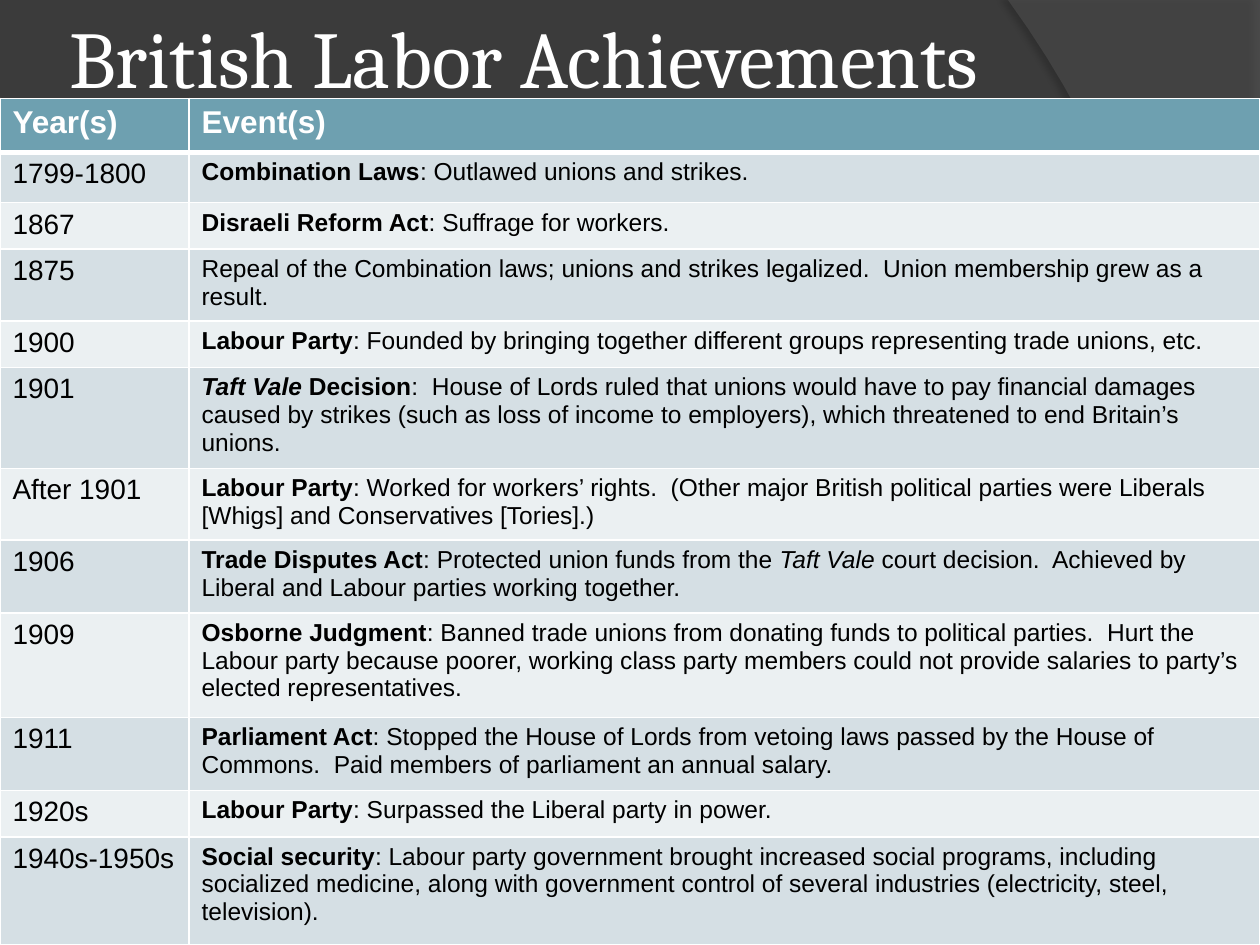
from lxml import etree
from pptx import Presentation
from pptx.dml.color import RGBColor
from pptx.enum.text import MSO_ANCHOR, PP_ALIGN
from pptx.oxml import parse_xml
from pptx.oxml.ns import nsdecls, qn
from pptx.util import Inches, Pt

MIDDLE = MSO_ANCHOR.MIDDLE
LEFT = PP_ALIGN.LEFT

BACKGROUND = RGBColor(0x3B, 0x3B, 0x3B)
SWEEP = RGBColor(0x5E, 0x5E, 0x5E)
WHITE = RGBColor(0xFF, 0xFF, 0xFF)
BLACK = RGBColor(0, 0, 0)
HEADER = RGBColor(0x6E, 0xA0, 0xB0)
BANDS = (RGBColor(0xD5, 0xDF, 0xE4), RGBColor(0xEB, 0xF0, 0xF2))

WIDTH, HEIGHT = Inches(10), Inches(7.5)
COLUMNS = (0.15, 0.85)
ROWS = (0.43, 0.4, 0.37, 0.57, 0.37, 0.8, 0.57, 0.58, 0.83, 0.58, 0.37, 0.86)

EVENTS = (
    ("1799-1800", (("Combination Laws", "b"), (": Outlawed unions and strikes.", ""))),
    ("1867", (("Disraeli Reform Act", "b"), (": Suffrage for workers.", ""))),
    ("1875", (("Repeal of the Combination laws; unions and strikes legalized.  "
               "Union membership grew as a result.", ""),)),
    ("1900", (("Labour Party", "b"),
              (": Founded by bringing together different groups representing "
               "trade unions, etc.", ""))),
    ("1901", (("Taft Vale ", "bi"), ("Decision", "b"),
              (":  House of Lords ruled that unions would have to pay financial "
               "damages caused by strikes (such as loss of income to employers), "
               "which threatened to end Britain’s unions.", ""))),
    ("After 1901", (("Labour Party", "b"),
                    (": Worked for workers’ rights.  (Other major British political "
                     "parties were Liberals [Whigs] and Conservatives [Tories].)", ""))),
    ("1906", (("Trade Disputes Act", "b"), (": Protected union funds from the ", ""),
              ("Taft Vale", "i"),
              (" court decision.  Achieved by Liberal and Labour parties "
               "working together.", ""))),
    ("1909", (("Osborne Judgment", "b"),
              (": Banned trade unions from donating funds to political parties.  "
               "Hurt the Labour party because poorer, working class party members "
               "could not provide salaries to party’s elected representatives.", ""))),
    ("1911", (("Parliament Act", "b"),
              (": Stopped the House of Lords from vetoing laws passed by the House "
               "of Commons.  Paid members of parliament an annual salary.", ""))),
    ("1920s", (("Labour Party", "b"), (": Surpassed the Liberal party in power.", ""))),
    ("1940s-1950s", (("Social security", "b"),
                     (": Labour party government brought increased social programs, "
                      "including socialized medicine, along with government control of "
                      "several industries (electricity, steel, television).", ""))),
)


def share(x, y, w, h):
    return int(x * WIDTH), int(y * HEIGHT), int(w * WIDTH), int(h * HEIGHT)


def write(p, text, size, color=BLACK, font="Arial", style=""):
    r = p.add_run()
    r.text = text
    r.font.name = font
    r.font.size = Pt(size)
    r.font.color.rgb = color
    r.font.bold = "b" in style
    r.font.italic = "i" in style


def bezier(a, b, c, d, steps=40):
    for n in range(steps + 1):
        t = n / steps
        u = 1 - t
        yield tuple(u**3 * i + 3 * u * u * t * j + 3 * u * t * t * k + t**3 * m
                    for i, j, k, m in zip(a, b, c, d))


def add_sweep(slide, box):
    x, y, w, h = box
    curve = bezier((0.1, 1), (0.68, 0.83), (1.09, 0.4), (0, 0))
    points = [(x + int(i * w), y + int(j * h)) for i, j in [(1, 1), *curve]]
    builder = slide.shapes.build_freeform(x + w, y)
    builder.add_line_segments(points, close=True)
    sp = builder.convert_to_shape()
    sp.line.fill.background()
    sp.fill.solid()
    sp.fill.fore_color.rgb = SWEEP
    color = sp.fill._xPr.find(qn("a:solidFill"))[0]
    etree.SubElement(color, qn("a:alpha"), val="40000")
    sp._element.spPr.append(parse_xml(
        f'<a:effectLst {nsdecls("a")}><a:outerShdw blurRad="{Pt(4)}" dist="{Pt(4)}" '
        'dir="10800000" algn="ctr" rotWithShape="0"><a:srgbClr val="000000">'
        '<a:alpha val="45000"/></a:srgbClr></a:outerShdw></a:effectLst>'))


def add_title(slide, box, text):
    tf = slide.shapes.add_textbox(*box).text_frame
    tf.word_wrap = True
    tf.vertical_anchor = MIDDLE
    tf.margin_left = tf.margin_right = Inches(0.05)
    tf.margin_top = tf.margin_bottom = Inches(0.05)
    tf.paragraphs[0].alignment = LEFT
    write(tf.paragraphs[0], text, 46, color=WHITE, font="Cambria")


def style_cell(cell, fill, top=1, bottom=1):
    tcPr = cell._tc.get_or_add_tcPr()
    for side, width in zip("LRTB", (1, 1, top, bottom)):
        tcPr.append(parse_xml(
            f'<a:ln{side} {nsdecls("a")} w="{Pt(width)}"><a:solidFill>'
            f'<a:srgbClr val="{WHITE}"/></a:solidFill></a:ln{side}>'))
    cell.fill.solid()
    cell.fill.fore_color.rgb = fill
    cell.margin_left = cell.margin_right = Inches(0.1)
    cell.margin_top = cell.margin_bottom = Inches(0.05)


def add_events(slide, box):
    w, h = box[2:]
    table = slide.shapes.add_table(len(ROWS), len(COLUMNS), *box).table
    for column, part in zip(table.columns, COLUMNS):
        column.width = int(part * w)
    for row, part in zip(table.rows, ROWS):
        row.height = int(part / sum(ROWS) * h)
    for cell, text in zip(table.rows[0].cells, ("Year(s)", "Event(s)")):
        style_cell(cell, HEADER, bottom=3)
        write(cell.text_frame.paragraphs[0], text, 18, color=WHITE, style="b")
    for n, (year, event) in enumerate(EVENTS):
        year_cell, event_cell = table.rows[n + 1].cells
        for cell in (year_cell, event_cell):
            style_cell(cell, BANDS[n % 2], top=1 if n else 3)
        write(year_cell.text_frame.paragraphs[0], year, 16)
        for text, style in event:
            write(event_cell.text_frame.paragraphs[0], text, 14, style=style)


def main():
    prs = Presentation()
    prs.slide_width, prs.slide_height = WIDTH, HEIGHT
    slide = prs.slides.add_slide(prs.slide_layouts[6])
    slide.background.fill.solid()
    slide.background.fill.fore_color.rgb = BACKGROUND
    add_sweep(slide, share(0.8, 0, 0.2, 1))
    add_title(slide, share(0.05, 0, 0.82, 0.12), "British Labor Achievements")
    add_events(slide, share(0, 0.104, 1, 0.896))
    prs.save("out.pptx")


if __name__ == "__main__":
    main()
